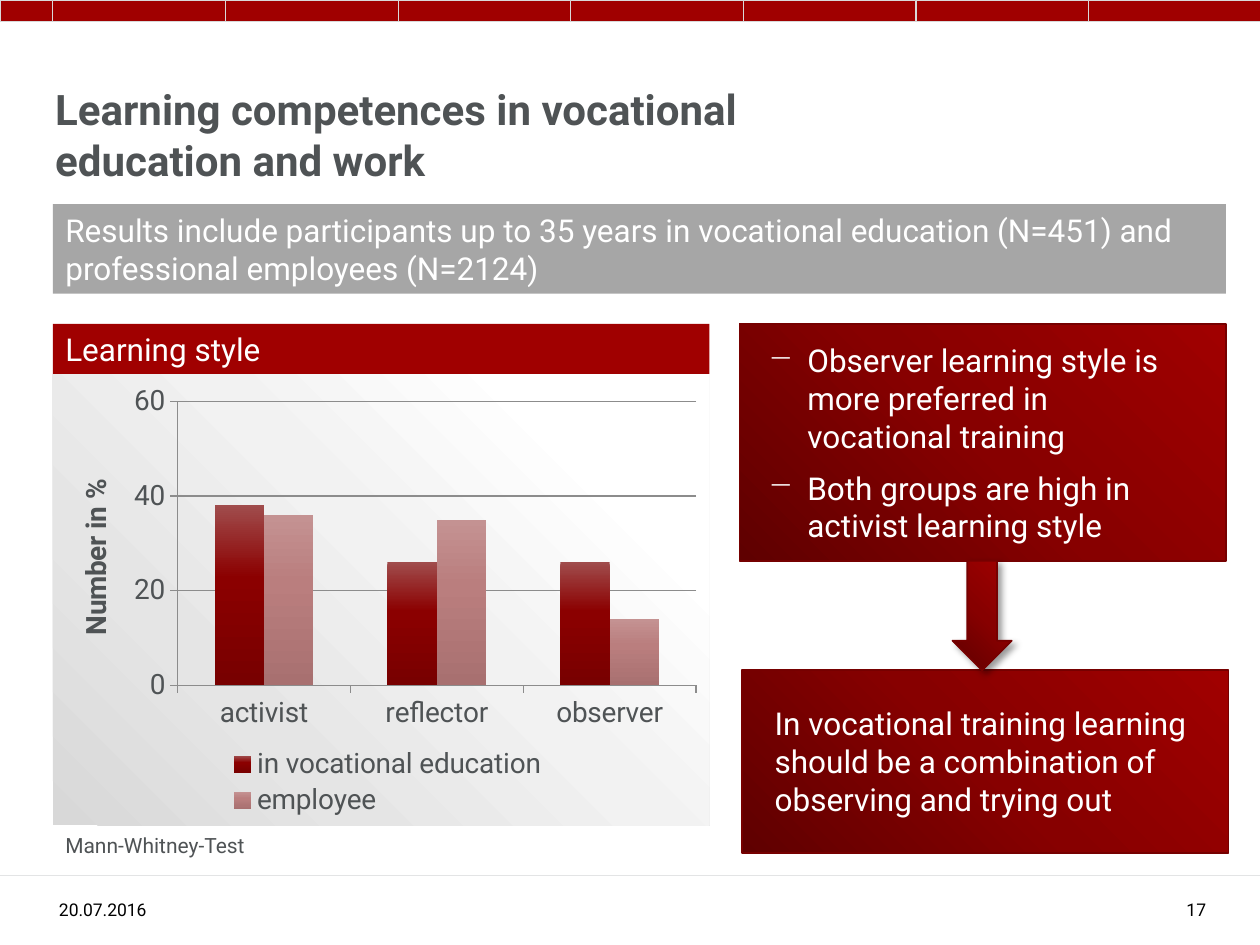
from lxml.etree import SubElement
from pptx import Presentation
from pptx.chart.data import CategoryChartData
from pptx.dml.color import RGBColor
from pptx.enum.chart import XL_CHART_TYPE as ChartType, XL_LEGEND_POSITION as LegendPos, XL_TICK_MARK as Tick
from pptx.enum.shapes import MSO_CONNECTOR as Connector, MSO_SHAPE as Shape
from pptx.enum.text import MSO_ANCHOR as Anchor, PP_ALIGN as Align
from pptx.oxml import parse_xml
from pptx.oxml.ns import nsdecls, qn
from pptx.util import Inches, Pt

FONT = "Roboto"
RED, GREY, WHITE, BLACK = "A00000", "4F5355", "FFFFFF", "000000"
EDGE, AXIS = "760000", "8C8C8C"
RED_FADE = [(0, "5F0000"), (50, "870000"), (100, RED)]
PANEL_FADE = [(0, "D8D8D8"), (28, "E5E5E5"), (55, "F2F2F2"), (82, WHITE)]

TITLE = "Learning competences in vocational education and work"
SAMPLE = ("Results include participants up to 35 years in vocational education (N=451) "
          "and professional employees (N=2124)")
STYLES = ["activist", "reflector", "observer"]
GROUPS = [
    ("in vocational education", [38, 26, 26], [(0, "A04C4C"), (40, "8B0000"), (100, "780000")]),
    ("employee", [36, 35, 14], [(0, "C49292"), (40, "BA7E7E"), (100, "A87070")]),
]
FINDINGS = [
    (2.66, 1.01, "Observer learning style is more preferred in vocational training"),
    (3.67, 0.71, "Both groups are high in activist learning style"),
]
CONCLUSION = "In vocational training learning should be a combination of observing and trying out"
RED_SHAPES = [
    (Shape.RECTANGLE, (5.87, 2.57, 3.86, 1.88)),
    (Shape.RECTANGLE, (5.89, 5.32, 3.86, 1.45)),
    (Shape.DOWN_ARROW, (7.56, 4.45, 0.47, 0.87)),
]
LEFT, SEGMENT, SEGMENTS = 0.42, 1.37, 7


def rgb(color):
    """Turn a hex string into a colour."""
    return RGBColor.from_string(color)


def inches(box):
    """Convert left, top, width and height."""
    return [Inches(value) for value in box]


def gradient(stops, angle):
    """Make a linear gradient fill element."""
    marks = "".join(f'<a:gs pos="{pos * 1000}"><a:srgbClr val="{color}"/></a:gs>' for pos, color in stops)
    return parse_xml(f'<a:gradFill {nsdecls("a")} rotWithShape="1"><a:gsLst>{marks}</a:gsLst>'
                     f'<a:lin ang="{angle * 60000}" scaled="0"/></a:gradFill>')


def fade(fill, properties, stops, angle):
    """Give a shape or series a gradient fill."""
    fill.background()
    properties.replace(properties.find(qn("a:noFill")), gradient(stops, angle))


def style(font, size, color, bold=False):
    """Set font, size, colour and weight."""
    font.name, font.size, font.bold = FONT, Pt(size), bold
    font.color.rgb = rgb(color)


def write(shape, text, size, color, bold=False, align=Align.LEFT, anchor=Anchor.TOP, bullet=None):
    """Put one styled paragraph in a shape."""
    frame = shape.text_frame
    frame.word_wrap, frame.vertical_anchor = True, anchor
    frame.text = text
    paragraph = frame.paragraphs[0]
    paragraph.alignment = align
    if bullet:
        properties = paragraph._p.get_or_add_pPr()
        properties.set("marL", str(Inches(0.31)))
        properties.set("indent", str(-Inches(0.31)))
        SubElement(properties, qn("a:buChar")).set("char", bullet)
    style(paragraph.runs[0].font, size, color, bold)


def add_text(slide, box, *args, **options):
    """Add a text box."""
    write(slide.shapes.add_textbox(*inches(box)), *args, **options)


def add_block(slide, box, fill, line=None, kind=Shape.RECTANGLE):
    """Add a shape with a plain or gradient fill."""
    block = slide.shapes.add_shape(kind, *inches(box))
    block.shadow.inherit = False
    if isinstance(fill, str):
        block.fill.solid()
        block.fill.fore_color.rgb = rgb(fill)
    else:
        fade(block.fill, block._element.spPr, fill, 315)
    if line:
        block.line.color.rgb, block.line.width = rgb(line[0]), Pt(line[1])
    else:
        block.line.fill.background()
    return block


def place(part, inner, **fractions):
    """Set a manual layout for a chart part."""
    old = part.find(qn("c:layout"))
    target = '<c:layoutTarget val="inner"/>' if inner else ""
    modes = '<c:xMode val="edge"/><c:yMode val="edge"/>'
    sizes = "".join(f'<c:{key} val="{value}"/>' for key, value in fractions.items())
    layout = parse_xml(f'<c:layout {nsdecls("c")}><c:manualLayout>{target}{modes}{sizes}'
                       '</c:manualLayout></c:layout>')
    if old is not None:
        part.replace(old, layout)
    elif inner:
        part.insert(0, layout)
    else:
        part.find(qn("c:legendPos")).addnext(layout)


def add_style_chart(slide, box):
    """Add the column chart of learning styles."""
    data = CategoryChartData()
    data.categories = STYLES
    for name, values, _ in GROUPS:
        data.add_series(name, values)
    chart = slide.shapes.add_chart(ChartType.COLUMN_CLUSTERED, *inches(box), data).chart
    style(chart.font, 16, GREY)
    chart.has_title = False
    plot = chart.plots[0]
    plot.gap_width, plot.overlap, plot.vary_by_categories = 150, 0, False
    for series, (_, _, stops) in zip(plot.series, GROUPS):
        fade(series.format.fill, series._element.get_or_add_spPr(), stops, 90)
    scale = chart.value_axis
    scale.minimum_scale, scale.maximum_scale, scale.major_unit = 0, 60, 20
    scale.has_major_gridlines = True
    scale.axis_title.text_frame.text = "Number in %"
    style(scale.axis_title.text_frame.paragraphs[0].runs[0].font, 16, GREY, True)
    for axis in (chart.category_axis, scale):
        axis.major_tick_mark = Tick.OUTSIDE
        style(axis.tick_labels.font, 16, GREY)
    for part in (chart.category_axis, scale, scale.major_gridlines):
        part.format.line.color.rgb, part.format.line.width = rgb(AXIS), Pt(0.75)
    chart.has_legend = True
    chart.legend.position, chart.legend.include_in_layout = LegendPos.BOTTOM, False
    style(chart.legend.font, 16, GREY)
    place(chart._chartSpace.chart.plotArea, True, x=0.19, y=0.06, w=0.79, h=0.63)
    place(chart.legend._element, False, x=0.26, y=0.82, w=0.5, h=0.17)
    panel = parse_xml(f'<c:spPr {nsdecls("c", "a")}><a:ln><a:noFill/></a:ln></c:spPr>')
    panel.insert(0, gradient(PANEL_FADE, 315))
    chart._chartSpace.chart.addnext(panel)


def main():
    """Build and save the slide."""
    deck = Presentation()
    deck.slide_width, deck.slide_height = Inches(10), Inches(7.5)
    slide = deck.slides.add_slide(deck.slide_layouts[6])

    for index in reversed(range(SEGMENTS)):
        add_block(slide, (LEFT + index * SEGMENT, 0, SEGMENT, 0.17), RED, ("D9D9D9", 0.5))
    add_block(slide, (0, 0, LEFT, 0.17), RED, ("D9D9D9", 0.5))
    footer = slide.shapes.add_connector(Connector.STRAIGHT, *inches((0, 6.95, 10, 6.95)))
    footer.line.color.rgb, footer.line.width = rgb("E3E4E5"), Pt(0.5)
    SubElement(footer._element.spPr, qn("a:effectLst"))

    add_text(slide, (0.34, 0.59, 6.93, 0.95), TITLE, 24, GREY, bold=True, anchor=Anchor.MIDDLE)
    add_text(slide, (0.37, 6.95, 1.1, 0.4), "20.07.2016", 10, BLACK, anchor=Anchor.BOTTOM)
    add_text(slide, (8.85, 6.95, 0.82, 0.4), "17", 10, BLACK, align=Align.RIGHT, anchor=Anchor.BOTTOM)
    write(add_block(slide, (LEFT, 1.62, 9.31, 0.71), "A6A6A6"), SAMPLE, 18, WHITE, anchor=Anchor.MIDDLE)

    write(add_block(slide, (LEFT, 2.57, 5.21, 0.4), RED), "Learning style", 18, WHITE)
    add_style_chart(slide, (LEFT, 2.97, 5.21, 3.58))
    add_text(slide, (LEFT, 6.56, 3.84, 0.3), "Mann-Whitney-Test", 12, GREY)

    for kind, box in RED_SHAPES:
        block = add_block(slide, box, RED_FADE, (EDGE, 1), kind)
    block._element.spPr.find(qn("a:effectLst")).append(parse_xml(
        f'<a:outerShdw {nsdecls("a")} blurRad="{Pt(4)}" dist="{Pt(3)}" dir="2700000" rotWithShape="0">'
        f'<a:srgbClr val="{BLACK}"><a:alpha val="40000"/></a:srgbClr></a:outerShdw>'))
    for top, height, finding in FINDINGS:
        add_text(slide, (6, top, 3.54, height), finding, 18, WHITE, bullet="−")
    add_text(slide, (6.05, 5.54, 3.54, 1.01), CONCLUSION, 18, WHITE)

    deck.save("out.pptx")


if __name__ == "__main__":
    main()
